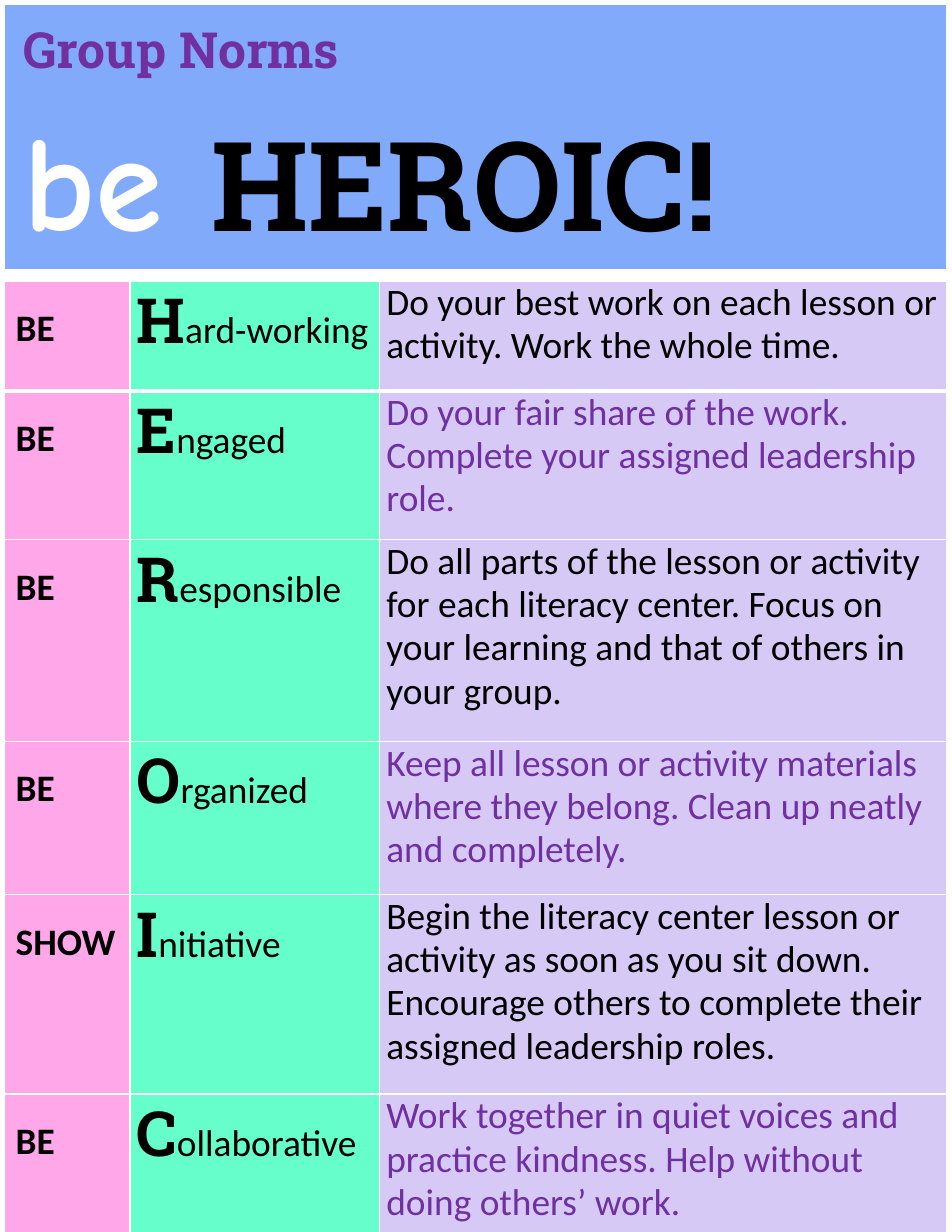
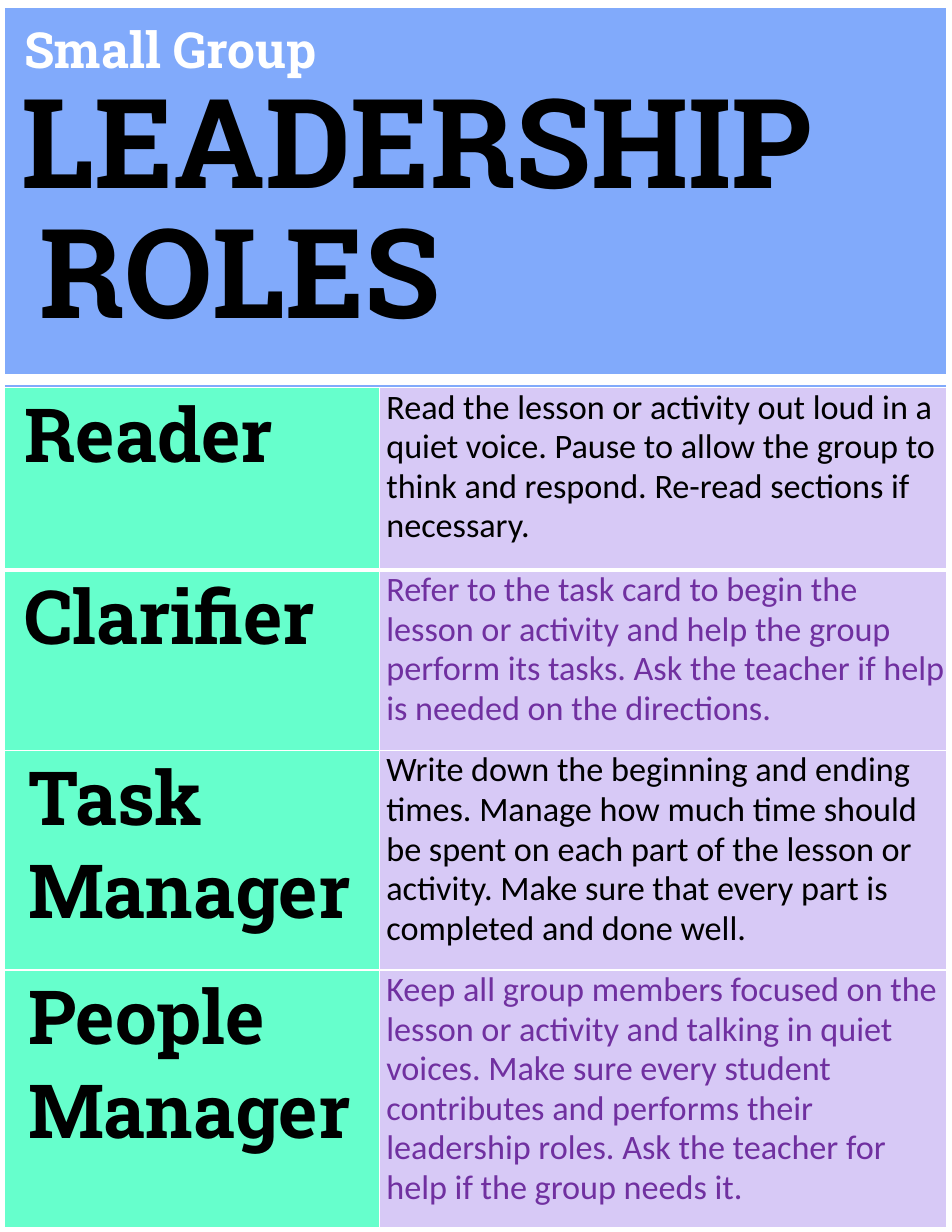
from lxml.etree import SubElement
from pptx import Presentation
from pptx.dml.color import RGBColor
from pptx.enum.shapes import MSO_CONNECTOR, MSO_SHAPE
from pptx.oxml.ns import qn
from pptx.util import Inches, Pt

COLORS = {"blue": "81AAFB", "pink": "FFA7E8", "mint": "66FFCC", "lilac": "D7C9F6",
          "purple": "7030A0", "white": "FFFFFF", "black": "000000"}
SLAB, SANS, COMIC = "Roboto Slab", "Calibri", "Comic Neue"
PAGE_W, PAGE_H = 8.5, 11
RULE = 7

NORMS = [
    ("BE", "Hard-working", 0.98,
     "Do your best work on each lesson or activity. Work the whole time."),
    ("BE", "Engaged", 1.33,
     "Do your fair share of the work. Complete your assigned leadership role."),
    ("BE", "Responsible", 1.8,
     "Do all parts of the lesson or activity for each literacy center. "
     "Focus on your learning and that of others in your group."),
    ("BE", "Organized", 1.37,
     "Keep all lesson or activity materials where they belong. "
     "Clean up neatly and completely."),
    ("SHOW", "Initiative", 1.78,
     "Begin the literacy center lesson or activity as soon as you sit down. "
     "Encourage others to complete their assigned leadership roles."),
    ("BE", "Collaborative", 1.36,
     "Work together in quiet voices and practice kindness. "
     "Help without doing others’ work."),
]

ROLES = [
    (["Reader"], 1.63,
     "Read the lesson or activity out loud in a quiet voice. Pause to allow the "
     "group to think and respond. Re-read sections if necessary."),
    (["Clarifier"], 1.61,
     "Refer to the task card to begin the lesson or activity and help the group "
     "perform its tasks. Ask the teacher if help is needed on the directions."),
    (["Task", "Manager"], 1.96,
     "Write down the beginning and ending times. Manage how much time should be "
     "spent on each part of the lesson or activity. Make sure that every part is "
     "completed and done well."),
    (["People", "Manager"], 2.3,
     "Keep all group members focused on the lesson or activity and talking in quiet "
     "voices. Make sure every student contributes and performs their leadership "
     "roles. Ask the teacher for help if the group needs it."),
]


def rgb(name):
    """Return the named colour."""
    return RGBColor.from_string(COLORS[name])


def set_font(font, name, size, color="black", bold=False):
    """Set the look of a paragraph or run font."""
    font.name, font.size, font.bold = name, Pt(size), bold
    font.color.rgb = rgb(color)


def write(tf, lines, spacing=1.0):
    """Write paragraphs, each a list of (text, font settings) runs."""
    for i, runs in enumerate(lines):
        p = tf.add_paragraph() if i else tf.paragraphs[0]
        p.line_spacing = spacing
        if len(runs) == 1:
            set_font(p.font, *runs[0][1])
        for text, look in runs:
            r = p.add_run()
            r.text = text
            if len(runs) > 1:
                set_font(r.font, *look)


def add_slide(prs):
    """Add a blank slide with the blue background."""
    s = prs.slides.add_slide(prs.slide_layouts[6])
    s.background.fill.solid()
    s.background.fill.fore_color.rgb = rgb("blue")
    return s


def add_heading(s, x, height, left, top, lines):
    """Add the heading box and return its paragraphs."""
    tf = s.shapes.add_textbox(Inches(x), 0, Inches(PAGE_W), Inches(height)).text_frame
    tf.word_wrap = True
    tf.margin_left, tf.margin_top = Inches(left), Inches(top)
    write(tf, lines)
    return tf.paragraphs


def add_grid(s, top, widths, heights):
    """Add a table with the given column widths and row heights."""
    tbl = s.shapes.add_table(len(heights), len(widths), 0, Inches(top),
                             Inches(sum(widths)), Inches(sum(heights))).table
    tbl.first_row = tbl.horz_banding = False
    for col, w in zip(tbl.columns, widths):
        col.width = Inches(w)
    for row, h in zip(tbl.rows, heights):
        row.height = Inches(h)
    return tbl


def add_border(tcPr, side, width):
    """Add a white border on one side of a cell."""
    ln = SubElement(tcPr, qn("a:ln" + side), w=str(Pt(width)))
    fill = SubElement(ln, qn("a:solidFill"))
    SubElement(fill, qn("a:srgbClr"), val=COLORS["white"])


def fill_cell(tbl, row, col, fill, lines, left=0.06, top=0):
    """Fill one cell with colour, borders and text."""
    cell = tbl.cell(row, col)
    tcPr = cell._tc.get_or_add_tcPr()
    thick = {(0, "B"), (1, "T")}
    for side in "LRTB":
        add_border(tcPr, side, 3 if (row, side) in thick else 1)
    cell.fill.solid()
    cell.fill.fore_color.rgb = rgb(fill)
    cell.margin_left, cell.margin_right = Inches(left), Inches(0.06)
    cell.margin_top, cell.margin_bottom = Inches(top), 0
    write(cell.text_frame, lines, 0.95)


def fill_description(tbl, row, col, text, size):
    """Fill a description cell, black and purple by turns."""
    color = "purple" if row % 2 else "black"
    fill_cell(tbl, row, col, "lilac", [[(text, (SANS, size, color))]])


def add_frame(s, y, height, rule_y):
    """Add the white page frame and the rule under the heading."""
    sp = s.shapes.add_shape(MSO_SHAPE.RECTANGLE, 0, Inches(y), Inches(PAGE_W), Inches(height))
    sp.shadow.inherit = False
    sp.fill.background()
    rule = s.shapes.add_connector(MSO_CONNECTOR.STRAIGHT, 0, Inches(rule_y),
                                  Inches(PAGE_W), Inches(rule_y))
    SubElement(rule._element.spPr, qn("a:effectLst"))
    for shape in (sp, rule):
        shape.line.color.rgb = rgb("white")
        shape.line.width = Pt(RULE)


def build_norms(prs):
    """Build the group norms slide."""
    s = add_slide(prs)
    tbl = add_grid(s, 2.51, [1.16, 2.23, 5.11], [n[2] for n in NORMS])
    for i, (verb, trait, _, text) in enumerate(NORMS):
        fill_cell(tbl, i, 0, "pink", [[(verb, (SANS, 24, "black", True))]], 0.14, 0.23)
        fill_cell(tbl, i, 1, "mint", [[(trait[0], (SLAB, 40, "black", True)),
                                       (trait[1:], (SANS, 24))]])
        fill_description(tbl, i, 2, text, 24)
    ps = add_heading(s, 0.15, 2.38, 0.06, 0.17, [
        [("Group Norms", (SLAB, 32, "purple", True))],
        [("be ", (COMIC, 88, "white", True)), ("HEROIC!", (SLAB, 80, "black", True))]])
    ps[1].space_before = Pt(10)
    add_frame(s, 0, 11.1, 2.45)


def build_roles(prs):
    """Build the leadership roles slide."""
    s = add_slide(prs)
    tbl = add_grid(s, 3.46, [3.39, 5.11], [r[1] for r in ROLES])
    for i, (words, _, text) in enumerate(ROLES):
        lines = [[(word, (SLAB, 48, "black", True))] for word in words]
        fill_cell(tbl, i, 0, "mint", lines, 0.22 if len(words) == 1 else 0.25)
        fill_description(tbl, i, 1, text, 22)
    big = (SLAB, 80, "black", True)
    ps = add_heading(s, 0, 3.4, 0.19, 0.19, [
        [("Small Group", (SLAB, 32, "white", True))], [("LEADERSHIP", big)], [("ROLES", big)]])
    for p, spacing, indent in zip(ps, (0.98, 0.87, 0.87), (0.03, 0, 0.16)):
        p.line_spacing = spacing
        p._p.get_or_add_pPr().set("marL", str(Inches(indent)))
    ps[1].space_before = Pt(3)
    add_frame(s, 0.02, 10.99, 3.39)


def main():
    """Build and save the presentation."""
    prs = Presentation()
    prs.slide_width, prs.slide_height = Inches(PAGE_W), Inches(PAGE_H)
    build_norms(prs)
    build_roles(prs)
    prs.save("out.pptx")


if __name__ == "__main__":
    main()
